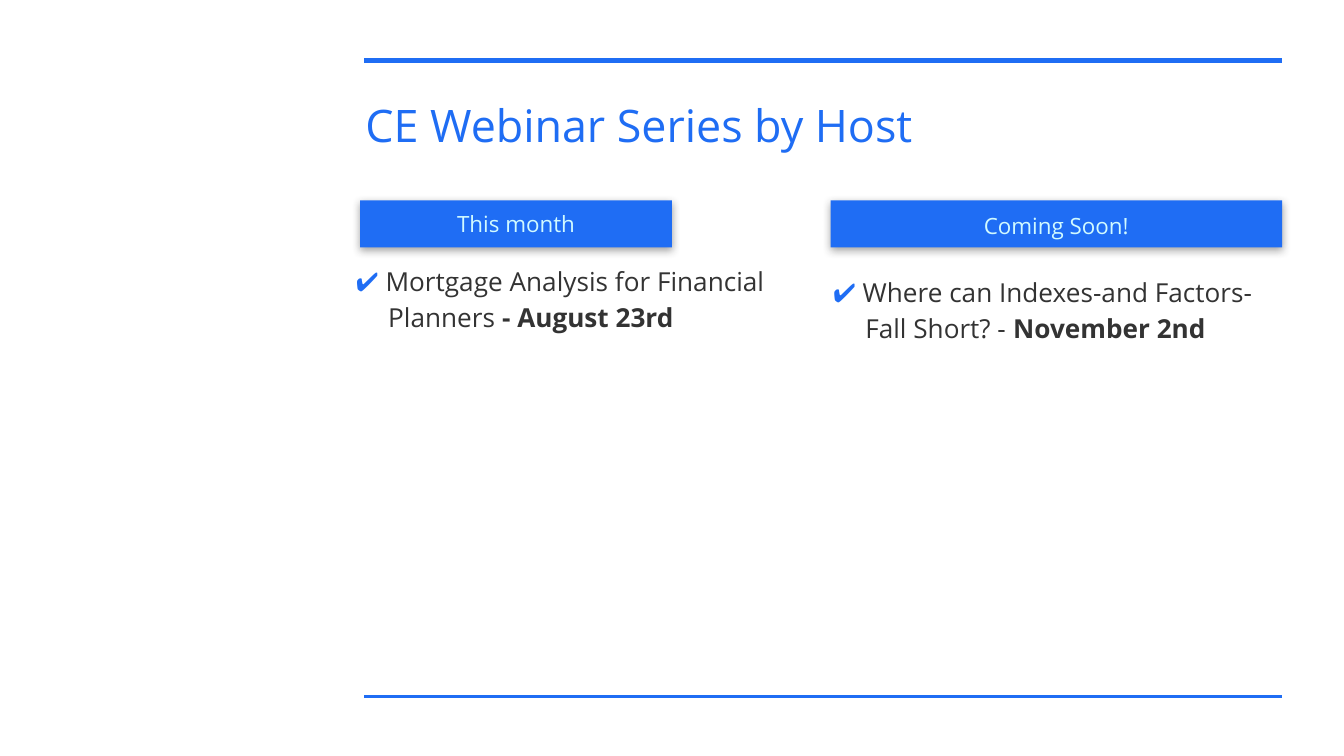
from lxml import etree
from pptx import Presentation
from pptx.dml.color import RGBColor
from pptx.enum import shapes, text
from pptx.oxml import ns
from pptx.util import Pt

BLUE = RGBColor(0x1F, 0x6D, 0xF4)
PALE = RGBColor(0xD1, 0xFA, 0xFF)
DARK = RGBColor(0x33, 0x33, 0x33)
FONT = "Open Sans"
LINE_SPACING = 1.15
INSET = 7.2
INDENT = 17.28

TITLE = "CE Webinar Series by Host"
TITLE_BOX = (188.64, 45.36, 497.52, 49.68)

RULE_LEFT, RULE_RIGHT = 195.12, 686.88
RULES = [(32.4, 3), (372.96, 1.5)]  # height on the slide, weight

BANNER_TOP, BANNER_HEIGHT = 107.28, 25.2
COLUMNS = [
    {
        "heading": "This month", "left": 192.96, "width": 167.04, "spacing": 1.0,
        "topic": "Mortgage Analysis for Financial Planners ", "date": "- August 23rd",
        "body": (183.6, 132.48, 238.32, 216),
    },
    {
        "heading": "Coming Soon!", "left": 444.96, "width": 241.92, "spacing": LINE_SPACING,
        "topic": "Where can Indexes-and Factors-Fall Short? - ", "date": "November 2nd",
        "body": (439.2, 138.24, 249.84, 195.84),
    },
]


def add_effects(shape, shadow=False):
    """Give the shape an effect list: empty, or with a soft shadow below."""
    effects = etree.SubElement(shape._element.spPr, ns.qn("a:effectLst"))
    if shadow:
        outer = etree.SubElement(effects, ns.qn("a:outerShdw"), blurRad=str(Pt(4.5)),
                                 dist=str(Pt(1.5)), dir="5400000", algn="bl", rotWithShape="0")
        color = etree.SubElement(outer, ns.qn("a:srgbClr"), val=str(DARK))
        etree.SubElement(color, ns.qn("a:alpha"), val="43000")


def set_font(font, size, color):
    font.name, font.size = FONT, Pt(size)
    font.color.rgb = color


def prepare_frame(shape):
    """Set wrapping and insets, and return the first paragraph."""
    frame = shape.text_frame
    frame.word_wrap = True
    frame.margin_left = frame.margin_right = Pt(INSET)
    frame.margin_top = frame.margin_bottom = Pt(INSET)
    return frame.paragraphs[0]


def add_rule(slide, y, weight):
    rule = slide.shapes.add_connector(shapes.MSO_CONNECTOR.STRAIGHT,
                                      Pt(RULE_LEFT), Pt(y), Pt(RULE_RIGHT), Pt(y))
    rule.line.color.rgb = BLUE
    rule.line.width = Pt(weight)
    add_effects(rule)


def add_title(slide):
    paragraph = prepare_frame(slide.shapes.add_textbox(*map(Pt, TITLE_BOX)))
    paragraph.text = TITLE
    set_font(paragraph.font, 24, BLUE)


def add_banner(slide, column):
    banner = slide.shapes.add_shape(shapes.MSO_SHAPE.RECTANGLE, Pt(column["left"]), Pt(BANNER_TOP),
                                    Pt(column["width"]), Pt(BANNER_HEIGHT))
    banner.fill.solid()
    banner.fill.fore_color.rgb = BLUE
    banner.line.fill.background()
    add_effects(banner, shadow=True)
    paragraph = prepare_frame(banner)
    banner.text_frame.vertical_anchor = text.MSO_ANCHOR.MIDDLE
    paragraph.text = column["heading"]
    paragraph.alignment = text.PP_ALIGN.CENTER
    paragraph.line_spacing = column["spacing"]
    set_font(paragraph.font, 12, PALE)


def add_webinar(slide, column):
    paragraph = prepare_frame(slide.shapes.add_textbox(*map(Pt, column["body"])))
    paragraph.line_spacing = LINE_SPACING
    properties = paragraph._p.get_or_add_pPr()
    properties.set("marL", str(Pt(INDENT)))
    properties.set("indent", str(-Pt(INDENT)))
    for words, color, bold in [("✔ ", BLUE, False), (column["topic"], DARK, False),
                               (column["date"], DARK, True)]:
        run = paragraph.add_run()
        run.text = words
        set_font(run.font, 14, color)
        run.font.bold = bold


presentation = Presentation()
presentation.slide_width, presentation.slide_height = Pt(720), Pt(405)
slide = presentation.slides.add_slide(presentation.slide_layouts[6])

for y, weight in RULES:
    add_rule(slide, y, weight)
add_title(slide)
for column in COLUMNS:
    add_banner(slide, column)
    add_webinar(slide, column)

presentation.save("out.pptx")
